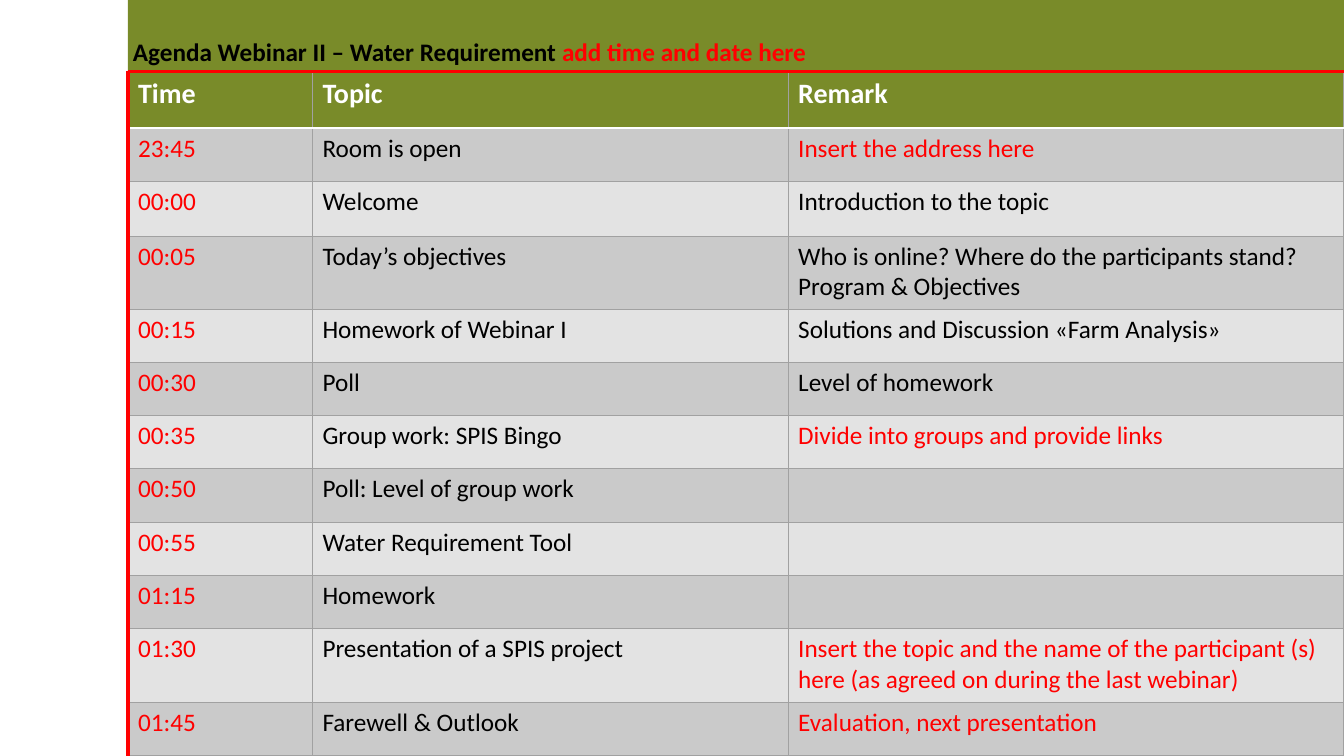
from dataclasses import dataclass

from lxml.etree import SubElement
from pptx import Presentation
from pptx.dml.color import RGBColor
from pptx.enum.shapes import MSO_CONNECTOR
from pptx.enum.text import MSO_ANCHOR, MSO_AUTO_SIZE, PP_ALIGN
from pptx.oxml.ns import qn
from pptx.slide import Slide
from pptx.table import _Cell
from pptx.text.text import _Paragraph
from pptx.util import Pt


@dataclass(frozen=True)
class Theme:
    font: str = "Calibri"
    green: str = "798B29"
    red: str = "FF0000"
    black: str = "000000"
    white: str = "FFFFFF"
    grid: str = "A1A1A1"
    bands: tuple[str, str] = ("CACACA", "E3E3E3")
    header_size: float = 20
    body_size: float = 18


@dataclass(frozen=True)
class AgendaItem:
    time: str
    topic: str
    remark: str = ""
    remark_open: bool = False  # still to be filled in by the host
    height: float = 38


THEME = Theme()
SLIDE_W, SLIDE_H = 960, 540
LEFT, TOP = 91.4, 51
COLUMNS = (131.8, 339.8, 397)
HEADER_HEIGHT = 40.6
HEADINGS = ("Time", "Topic", "Remark")
AGENDA = (
    AgendaItem("23:45", "Room is open", "Insert the address here", True),
    AgendaItem("00:00", "Welcome", "Introduction to the topic", height=39),
    AgendaItem("00:05", "Today’s objectives",
               "Who is online? Where do the participants stand? Program & Objectives",
               height=52.4),
    AgendaItem("00:15", "Homework of Webinar I", "Solutions and Discussion «Farm Analysis»"),
    AgendaItem("00:30", "Poll", "Level of homework"),
    AgendaItem("00:35", "Group work: SPIS Bingo", "Divide into groups and provide links", True),
    AgendaItem("00:50", "Poll: Level of group work"),
    AgendaItem("00:55", "Water Requirement Tool"),
    AgendaItem("01:15", "Homework"),
    AgendaItem("01:30", "Presentation of a SPIS project",
               "Insert the topic and the name of the participant (s) here "
               "(as agreed on during the last webinar)", True, 52.6),
    AgendaItem("01:45", "Farewell & Outlook", "Evaluation, next presentation", True),
)


def add_run(p: _Paragraph, text: str, color: str, size: float, bold: bool = False) -> None:
    r = p.add_run()
    r.text = text
    r.font.name = THEME.font
    r.font.size = Pt(size)
    r.font.bold = bold
    r.font.color.rgb = RGBColor.from_string(color)


def set_border(cell: _Cell, side: str, color: str, width: float) -> None:
    """Add one cell edge; sides must come in the order L, R, T, B."""
    ln = SubElement(cell._tc.get_or_add_tcPr(), qn(f"a:ln{side}"), w=str(Pt(width)))
    fill = SubElement(ln, qn("a:solidFill"))
    SubElement(fill, qn("a:srgbClr"), val=color)


def fill_cell(cell: _Cell, text: str, color: str, row: int) -> None:
    header = row == 0
    for side in "LRTB":
        under_header = (row, side) in ((0, "B"), (1, "T"))
        set_border(cell, side, *((THEME.white, 2) if under_header else (THEME.grid, 0.75)))
    cell.fill.solid()
    cell.fill.fore_color.rgb = RGBColor.from_string(
        THEME.green if header else THEME.bands[(row - 1) % 2])
    if text:
        size = THEME.header_size if header else THEME.body_size
        add_run(cell.text_frame.paragraphs[0], text, color, size, header)


def add_title(s: Slide) -> None:
    sp = s.shapes.title
    sp.left, sp.top, sp.width, sp.height = Pt(LEFT), Pt(0), Pt(SLIDE_W - LEFT), Pt(TOP)
    sp.fill.solid()
    sp.fill.fore_color.rgb = RGBColor.from_string(THEME.green)
    tf = sp.text_frame
    tf.word_wrap = True
    tf.auto_size = MSO_AUTO_SIZE.NONE
    tf.vertical_anchor = MSO_ANCHOR.BOTTOM
    tf.margin_left = tf.margin_right = tf.margin_top = tf.margin_bottom = Pt(3.6)
    p = tf.paragraphs[0]
    p.alignment = PP_ALIGN.LEFT
    add_run(p, "Agenda Webinar II – Water Requirement ", THEME.black, THEME.body_size, True)
    add_run(p, "add time and date here", THEME.red, THEME.body_size, True)


def add_agenda(s: Slide) -> None:
    heights = (HEADER_HEIGHT, *(item.height for item in AGENDA))
    table = s.shapes.add_table(len(heights), len(COLUMNS), Pt(LEFT), Pt(TOP),
                               Pt(sum(COLUMNS)), Pt(sum(heights))).table
    for column, width in zip(table.columns, COLUMNS):
        column.width = Pt(width)
    for row, height in zip(table.rows, heights):
        row.height = Pt(height)
    for col, heading in enumerate(HEADINGS):
        fill_cell(table.cell(0, col), heading, THEME.white, 0)
    for row, item in enumerate(AGENDA, start=1):
        remark_color = THEME.red if item.remark_open else THEME.black
        texts = (item.time, item.topic, item.remark)
        colors = (THEME.red, THEME.black, remark_color)
        for col, (text, color) in enumerate(zip(texts, colors)):
            fill_cell(table.cell(row, col), text, color, row)


def add_red_line(s: Slide, x1: float, y1: float, x2: float, y2: float) -> None:
    line = s.shapes.add_connector(MSO_CONNECTOR.STRAIGHT, Pt(x1), Pt(y1), Pt(x2), Pt(y2))
    line.line.color.rgb = RGBColor.from_string(THEME.red)
    line.line.width = Pt(2.25)
    SubElement(line._element.spPr, qn("a:effectLst"))


def main() -> None:
    prs = Presentation()
    prs.slide_width, prs.slide_height = Pt(SLIDE_W), Pt(SLIDE_H)
    s = prs.slides.add_slide(prs.slide_layouts[5])
    add_title(s)
    add_agenda(s)
    add_red_line(s, LEFT, TOP, SLIDE_W, TOP)
    add_red_line(s, LEFT, SLIDE_H, LEFT, TOP)
    prs.save("out.pptx")


if __name__ == "__main__":
    main()
